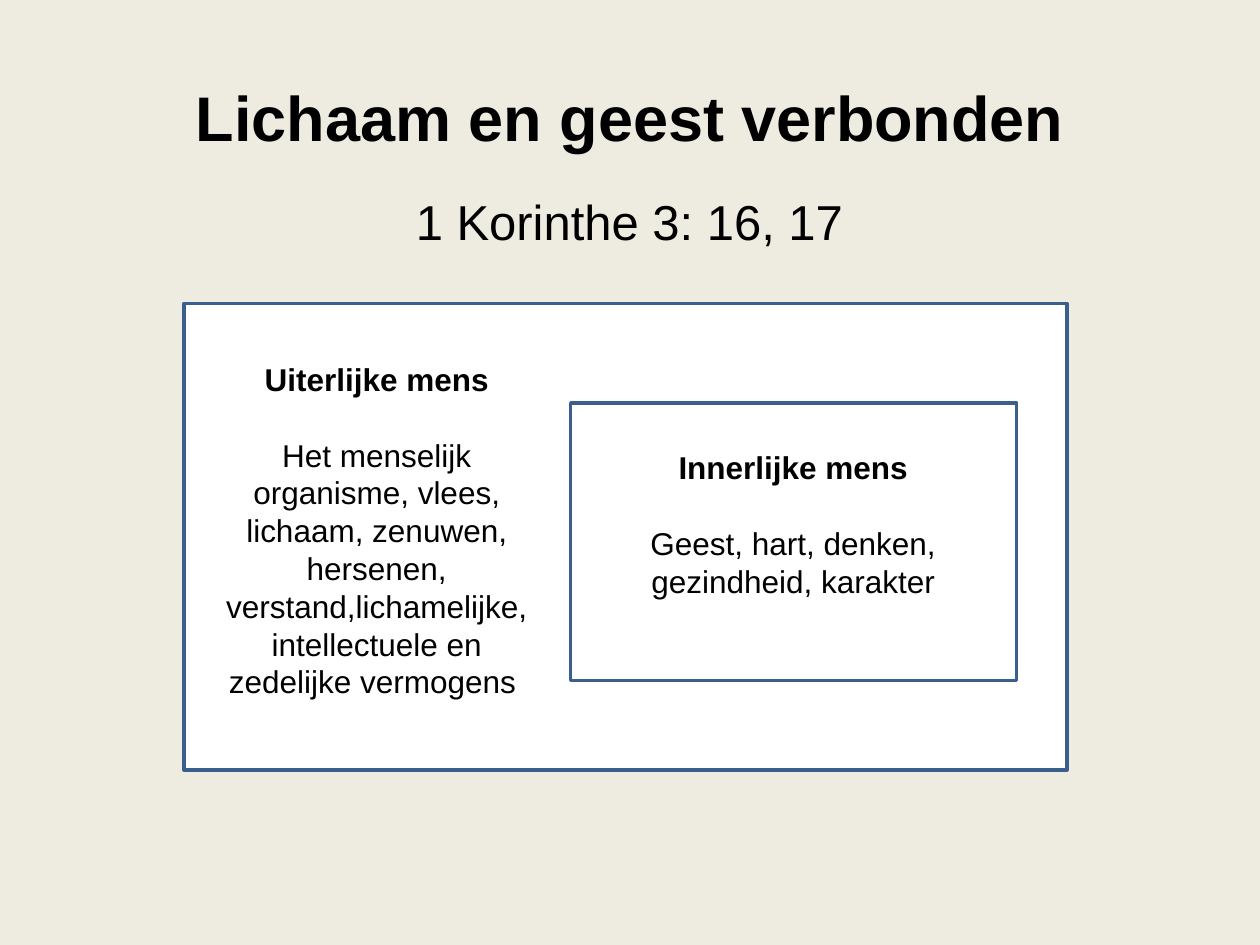
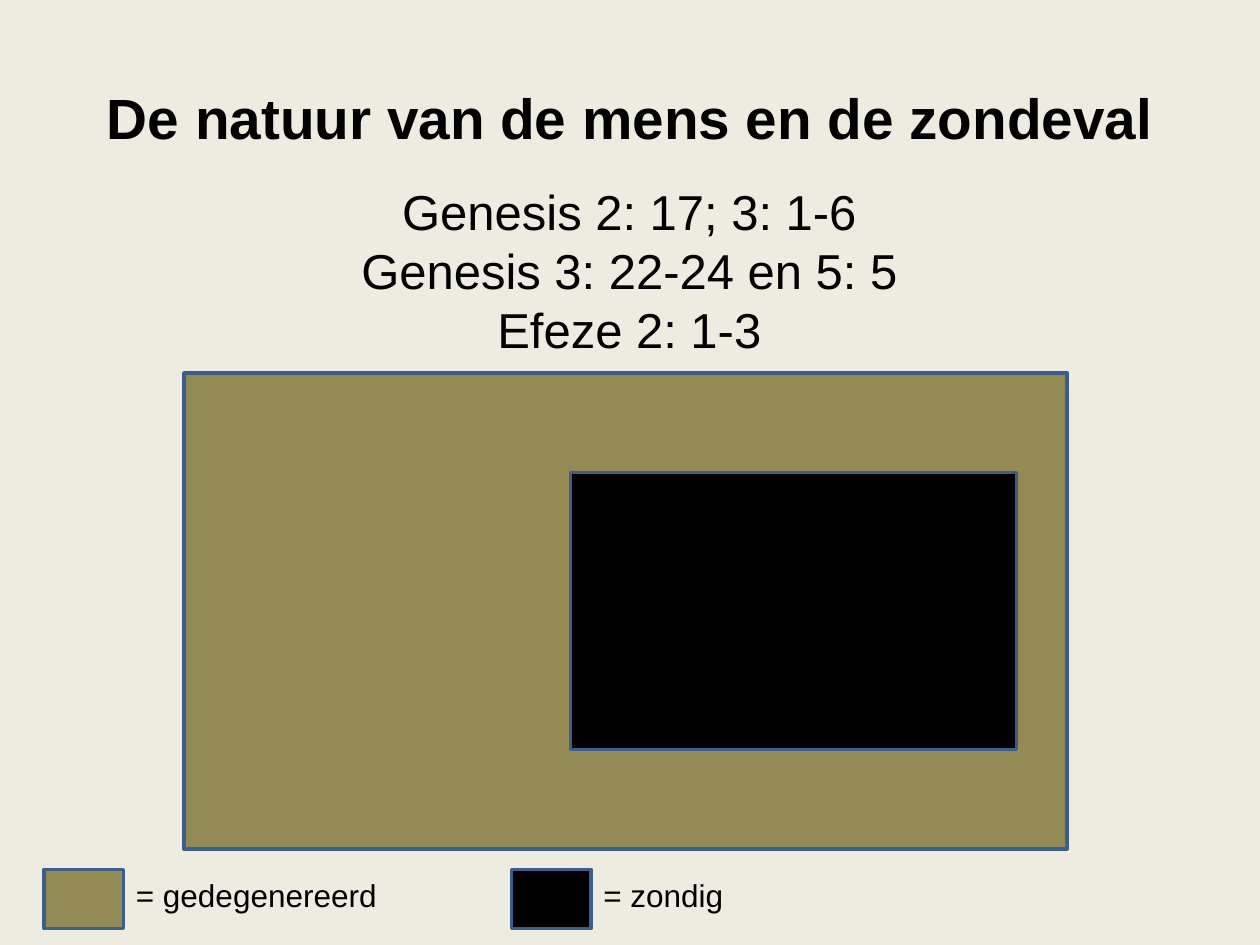
from collections import namedtuple

from pptx import Presentation
from pptx.dml.color import RGBColor
from pptx.enum.shapes import MSO_SHAPE as Preset
from pptx.enum.text import MSO_ANCHOR as Anchor, MSO_AUTO_SIZE as AutoSize, PP_ALIGN as Align
from pptx.util import Inches, Pt

COLUMNS, ROWS = 100, 75
SLIDE_WIDTH, SLIDE_HEIGHT = Inches(10), Inches(7.5)
TITLE_ONLY = 5
FONT = "Arial"
CREAM, WHITE, BLACK, OLIVE, BLUE = "EEECE1", "FFFFFF", "000000", "948A54", "3A5F8C"
BODY_SIZE, VERSE_SIZE = 18, 28
HEADING_GAP = 21.5


class Box(namedtuple("Box", "left top width height")):
    def inside(self, left, top, width, height):
        return Box(self.left + left, self.top + top, width, height)

    def lengths(self):
        column, row = SLIDE_WIDTH / COLUMNS, SLIDE_HEIGHT / ROWS
        return (round(self.left * column), round(self.top * row),
                round(self.width * column), round(self.height * row))


TITLE = Box(5, 3, 90, 12.5)


def color(hex_string):
    return RGBColor.from_string(hex_string)


def format_paragraph(paragraph, size, bold=False, align=Align.CENTER):
    paragraph.alignment = align
    font = paragraph.font
    font.name, font.size, font.bold = FONT, Pt(size), bold
    font.color.rgb = color(BLACK)


def add_titled_slide(deck, heading, size):
    slide = deck.slides.add_slide(deck.slide_layouts[TITLE_ONLY])
    title = slide.shapes.title
    title.left, title.top, title.width, title.height = TITLE.lengths()
    frame = title.text_frame
    frame.text = heading
    frame.vertical_anchor = Anchor.MIDDLE
    frame.auto_size = AutoSize.NONE
    format_paragraph(frame.paragraphs[0], size, bold=True)
    return slide


def add_panel(slide, box, fill):
    panel = slide.shapes.add_shape(Preset.RECTANGLE, *box.lengths())
    panel.shadow.inherit = False
    panel.fill.solid()
    panel.fill.fore_color.rgb = color(fill)
    panel.line.color.rgb = color(BLUE)
    panel.line.width = Pt(2)


def add_lines(slide, box, lines, size, align=Align.CENTER):
    frame = slide.shapes.add_textbox(*box.lengths()).text_frame
    frame.word_wrap = True
    frame.auto_size = AutoSize.SHAPE_TO_FIT_TEXT
    frame.text = "\n".join(lines)
    for paragraph in frame.paragraphs:
        format_paragraph(paragraph, size, align=align)
    return frame


def add_description(slide, box, heading, description):
    frame = add_lines(slide, box, [heading, description], BODY_SIZE)
    frame.paragraphs[0].font.bold = True
    frame.paragraphs[0].space_after = Pt(HEADING_GAP)


def add_nested_panels(slide, outer, outer_fill, inner_fill):
    inner = outer.inside(30.7, 7.9, 35.4, 22)
    add_panel(slide, outer, outer_fill)
    add_panel(slide, inner, inner_fill)
    return inner


def add_legend(slide, box, entries):
    pitch = box.width / len(entries)
    for index, (fill, meaning) in enumerate(entries):
        entry = box.inside(index * pitch, 0, pitch, box.height)
        add_panel(slide, entry.inside(0, 0, 6.3, box.height), fill)
        add_lines(slide, entry.inside(6.3, 0, 27.6, 4), [f"= {meaning}"],
                  BODY_SIZE, Align.LEFT)


def build_body_and_mind(deck):
    slide = add_titled_slide(deck, "Lichaam en geest verbonden", 36)
    outer = Box(14.6, 24.1, 70.1, 37)
    inner = add_nested_panels(slide, outer, WHITE, WHITE)
    add_description(slide, outer.inside(2.3, 4, 26, 31.3), "Uiterlijke mens",
                    "Het menselijk organisme, vlees, lichaam, zenuwen, hersenen, "
                    "verstand,lichamelijke, intellectuele en zedelijke vermogens ")
    add_description(slide, inner.inside(3.1, 3.1, 29.1, 13.1), "Innerlijke mens",
                    "Geest, hart, denken, gezindheid, karakter")
    add_lines(slide, Box(16.1, 14.7, 67.7, 5.7), ["1 Korinthe 3: 16, 17"], VERSE_SIZE)


def build_fall(deck):
    slide = add_titled_slide(deck, "De natuur van de mens en de zondeval", 32.4)
    add_nested_panels(slide, Box(14.6, 29.6, 70.1, 37.8), OLIVE, BLACK)
    verses = ["Genesis 2: 17; 3: 1-6", "Genesis 3: 22-24 en 5: 5", "Efeze 2: 1-3"]
    add_lines(slide, Box(16.1, 13.9, 67.7, 15.1), verses, VERSE_SIZE)
    add_legend(slide, Box(3.5, 69, 74.2, 4.7),
               [(OLIVE, "gedegenereerd"), (BLACK, "zondig")])


def main():
    deck = Presentation()
    deck.slide_width, deck.slide_height = SLIDE_WIDTH, SLIDE_HEIGHT
    backdrop = deck.slide_master.background.fill
    backdrop.solid()
    backdrop.fore_color.rgb = color(CREAM)
    build_body_and_mind(deck)
    build_fall(deck)
    deck.save("out.pptx")


if __name__ == "__main__":
    main()
